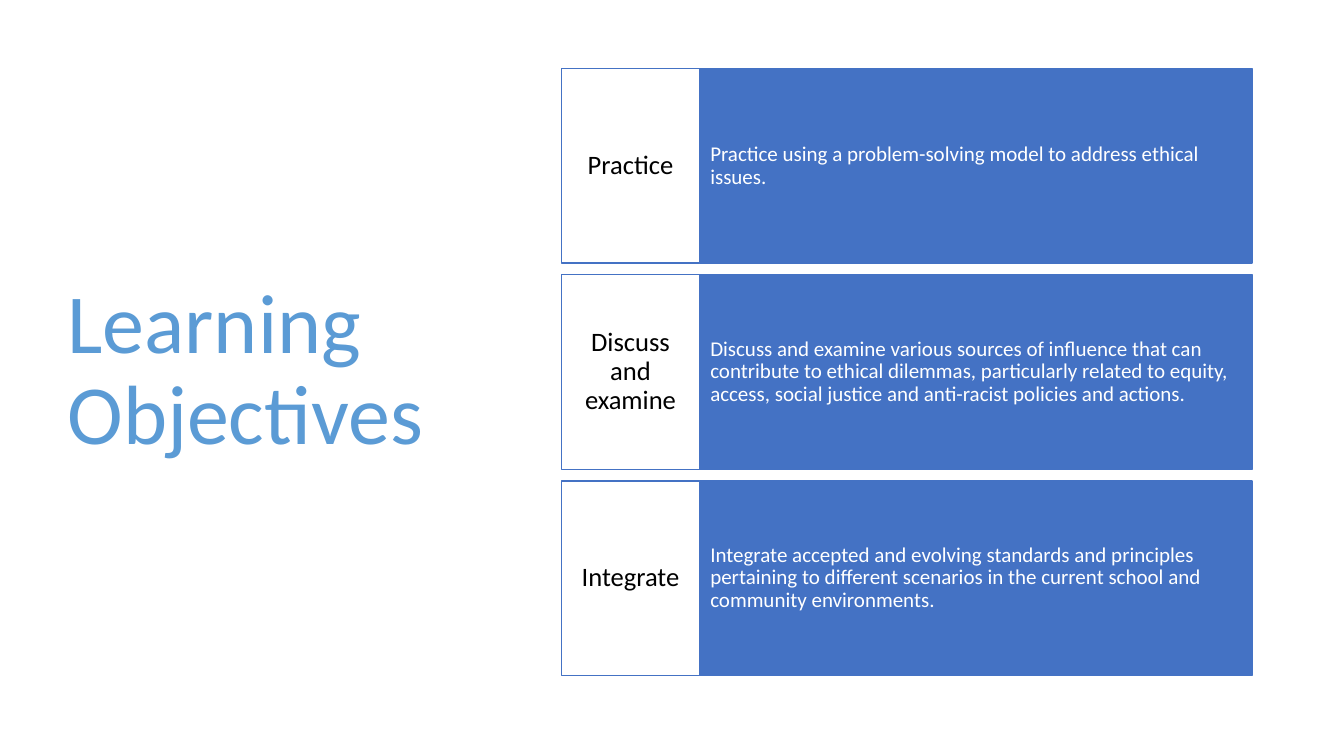
from pptx import Presentation
from pptx import util as u
from pptx.dml import color
from pptx.enum import shapes, text

BLUE, LIGHT_BLUE, WHITE, BLACK = "4472C4", "5B9BD5", "FFFFFF", "000000"

OBJECTIVES = [
    ("Practice",
     "Practice using a problem-solving model to address ethical issues."),
    ("Discuss and examine",
     "Discuss and examine various sources of influence that can contribute to "
     "ethical dilemmas, particularly related to equity, access, social justice "
     "and anti-racist policies and actions."),
    ("Integrate",
     "Integrate accepted and evolving standards and principles pertaining to "
     "different scenarios in the current school and community environments."),
]


def rgb(hex_color):
    return color.RGBColor.from_string(hex_color)


def write(shape, words, *, size, ink, align=text.PP_ALIGN.LEFT, inset=(0.25, 0.13)):
    """Fill a shape with one paragraph; inset is (sides, top and bottom) in cm."""
    frame = shape.text_frame
    frame.word_wrap = True
    frame.auto_size = text.MSO_AUTO_SIZE.NONE
    frame.vertical_anchor = text.MSO_ANCHOR.MIDDLE
    frame.margin_left = frame.margin_right = u.Cm(inset[0])
    frame.margin_top = frame.margin_bottom = u.Cm(inset[1])
    paragraph = frame.paragraphs[0]
    paragraph.alignment = align
    paragraph.line_spacing = 0.9
    run = paragraph.add_run()
    run.text = words
    run.font.name = "Calibri"
    run.font.size = u.Pt(size)
    run.font.color.rgb = rgb(ink)


def add_panel(slide, left, top, width, height, fill):
    panel = slide.shapes.add_shape(
        shapes.MSO_SHAPE.RECTANGLE,
        u.Cm(left), u.Cm(top), u.Cm(width), u.Cm(height))
    panel.shadow.inherit = False
    panel.fill.solid()
    panel.fill.fore_color.rgb = rgb(fill)
    panel.line.color.rgb = rgb(BLUE)
    panel.line.width = u.Pt(1)
    return panel


def place_title(slide, left, top, width, height):
    title = slide.shapes.title
    title.left, title.top = u.Cm(left), u.Cm(top)
    title.width, title.height = u.Cm(width), u.Cm(height)
    write(title, "Learning Objectives", size=60, ink=LIGHT_BLUE)


def add_objective(slide, left, top, width, height, verb, detail):
    verb_width = width / 5
    detail_panel = add_panel(
        slide, left + verb_width, top, width - verb_width, height, BLUE)
    write(detail_panel, detail, size=15, ink=WHITE, inset=(0.27, 1.25))
    verb_panel = add_panel(slide, left, top, verb_width, height, WHITE)
    write(verb_panel, verb, size=19, ink=BLACK,
          align=text.PP_ALIGN.CENTER, inset=(0.18, 0.48))


def add_objectives(slide, left, top, width, height, gap=0.29):
    row_height = (height - gap * (len(OBJECTIVES) - 1)) / len(OBJECTIVES)
    for row, (verb, detail) in enumerate(OBJECTIVES):
        row_top = top + row * (row_height + gap)
        add_objective(slide, left, row_top, width, row_height, verb, detail)


def main():
    deck = Presentation()
    deck.slide_width, deck.slide_height = u.Cm(33.87), u.Cm(19.05)
    slide = deck.slides.add_slide(deck.slide_layouts.get_by_name("Title Only"))
    place_title(slide, 1.45, 1.73, 10.57, 15.29)
    add_objectives(slide, 14.15, 1.73, 17.4, 15.29)
    deck.save("out.pptx")


if __name__ == "__main__":
    main()
